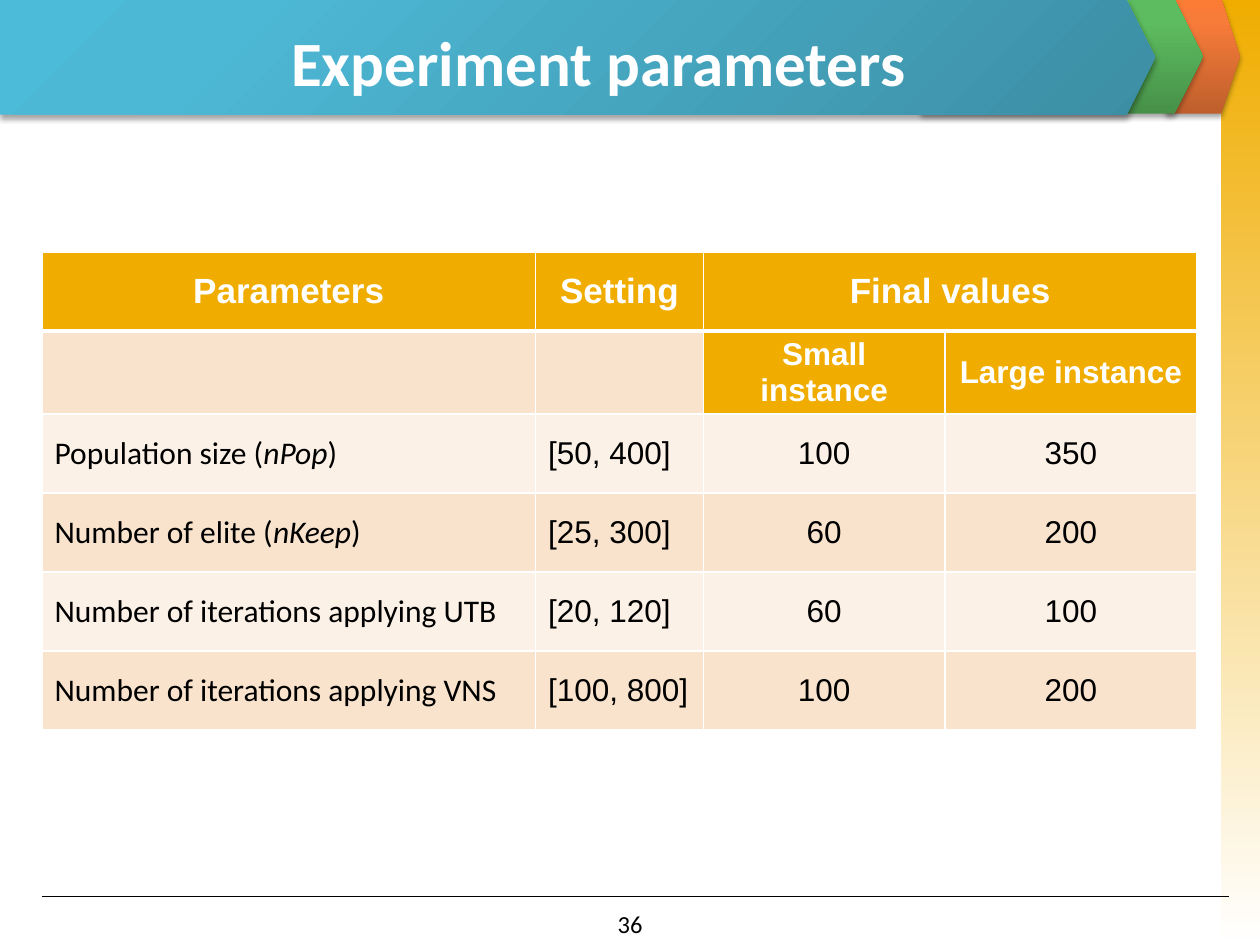
from pptx import Presentation
from pptx.dml.color import RGBColor
from pptx.enum.shapes import MSO_CONNECTOR, MSO_SHAPE
from pptx.enum.text import MSO_ANCHOR, PP_ALIGN
from pptx.oxml import parse_xml
from pptx.oxml.ns import nsdecls
from pptx.util import Pt

THEME = {
    "white": "FFFFFF", "black": "000000", "gold": "F0AD00",
    "bands": ("F9E3CC", "FCF1E7"),
    "fade": [(0, "F0AD00"), (100, "FFFFFF")],
    "orange": [(0, "BE5F2C"), (80, "F77B39"), (100, "FC7B35")],
    "green": [(0, "479149"), (80, "5DBC5F"), (100, "5BBF5E")],
    "blue": [(0, "3C8EA4"), (80, "4DB8D5"), (100, "4BBBD9")],
    "sans": "Calibri", "grid": "Arial",
    "title": 36, "head": 20, "cell": 18, "foot": 14,
}
TITLE = "Experiment parameters"
PAGE = "36"
HEADS = [
    ["Parameters", "Setting", "Final values", ""],
    ["", "", "Small instance", "Large instance"],
]
ROWS = [
    [("Population size (", "nPop", ")"), "[50, 400]", "100", "350"],
    [("Number of elite (", "nKeep", ")"), "[25, 300]", "60", "200"],
    ["Number of iterations applying UTB", "[20, 120]", "60", "100"],
    ["Number of iterations applying VNS", "[100, 800]", "100", "200"],
]
COLS = [282, 96, 138, 144]
HIGH = 45.1
PLATES = [
    ("orange", (666, -0.5, 42.5, 65.5)),
    ("green", (526.5, -0.5, 161, 65.5)),
    ("blue", (0, 0, 660, 65.5)),
]


def put(frame, text, font=THEME["sans"], size=THEME["cell"],
        color=THEME["black"], bold=False, align=PP_ALIGN.CENTER):
    frame.word_wrap = True
    para = frame.paragraphs[0]
    para.alignment = align
    parts = (text,) if isinstance(text, str) else text
    for i, part in enumerate(parts):
        run = para.add_run()
        run.text = part
        run.font.name = font
        run.font.size = Pt(size)
        run.font.bold = bold
        run.font.italic = i % 2 == 1
        run.font.color.rgb = RGBColor.from_string(color)


def block(slide, kind, box, stops, angle=None, shade=True):
    shape = slide.shapes.add_shape(kind, *map(Pt, box))
    shape.line.fill.background()
    shape.shadow.inherit = False
    marks = "".join(
        f'<a:gs pos="{pos * 1000}"><a:srgbClr val="{tone}"/></a:gs>'
        for pos, tone in stops)
    if angle is None:
        way = ('<a:path path="circle">'
               '<a:fillToRect l="100000" t="100000"/></a:path>')
    else:
        way = f'<a:lin ang="{angle * 60000}" scaled="0"/>'
    props = shape._element.spPr
    props.insert(2, parse_xml(
        f'<a:gradFill {nsdecls("a")} rotWithShape="1">'
        f'<a:gsLst>{marks}</a:gsLst>{way}</a:gradFill>'))
    if shade:
        props[-1].append(parse_xml(
            f'<a:outerShdw {nsdecls("a")} blurRad="{Pt(3.1)}" '
            f'dist="{Pt(1.8)}" dir="5400000" rotWithShape="0">'
            f'<a:srgbClr val="{THEME["black"]}"><a:alpha val="35000"/>'
            '</a:srgbClr></a:outerShdw>'))
    return shape


def edge(cell, row):
    wide = {"lnT": 3 if row == 1 else 1, "lnB": 3 if row == 0 else 1}
    for side in ("lnL", "lnR", "lnT", "lnB"):
        cell._tc.get_or_add_tcPr().append(parse_xml(
            f'<a:{side} {nsdecls("a")} w="{Pt(wide.get(side, 1))}">'
            f'<a:solidFill><a:srgbClr val="{THEME["white"]}"/></a:solidFill>'
            f'</a:{side}>'))


def fill(cell, text, row, col):
    head = row < len(HEADS)
    edge(cell, row)
    cell.vertical_anchor = MSO_ANCHOR.MIDDLE
    cell.fill.solid()
    gold = row == 0 or (head and text)
    tone = THEME["gold"] if gold else THEME["bands"][(row + 1) % 2]
    cell.fill.fore_color.rgb = RGBColor.from_string(tone)
    if text:
        put(cell.text_frame, text,
            font=THEME["sans"] if col == 0 and not head else THEME["grid"],
            size=THEME["head"] if row == 0 else THEME["cell"],
            color=THEME["white"] if head else THEME["black"], bold=head,
            align=PP_ALIGN.CENTER if head or col > 1 else PP_ALIGN.LEFT)


def frame(slide):
    block(slide, MSO_SHAPE.RECTANGLE, (697.5, 0, 22.5, 540),
          THEME["fade"], 90, False)
    for name, box in PLATES:
        plate = block(slide, MSO_SHAPE.PENTAGON, box, THEME[name],
                      None if name == "blue" else 270)
        plate.adjustments[0] = 0.25
    rule = slide.shapes.add_connector(
        MSO_CONNECTOR.STRAIGHT, Pt(24), Pt(512.5), Pt(702), Pt(512.5))
    rule.line.width = Pt(0.75)
    rule.line.color.rgb = RGBColor.from_string(THEME["black"])
    rule._element.spPr.append(parse_xml(f'<a:effectLst {nsdecls("a")}/>'))


def grid(slide):
    data = HEADS + ROWS
    table = slide.shapes.add_table(
        len(data), len(COLS), Pt(24), Pt(144),
        Pt(sum(COLS)), Pt(HIGH * len(data))).table
    for col, wide in enumerate(COLS):
        table.columns[col].width = Pt(wide)
    for row, texts in enumerate(data):
        table.rows[row].height = Pt(HIGH)
        for col, text in enumerate(texts):
            fill(table.cell(row, col), text, row, col)
    table.cell(0, 2).merge(table.cell(0, 3))


def main():
    deck = Presentation()
    deck.slide_width, deck.slide_height = Pt(720), Pt(540)
    slide = deck.slides.add_slide(deck.slide_layouts[5])
    frame(slide)
    title = slide.shapes.title
    slide.shapes._spTree.append(title._element)
    title.left, title.top, title.width, title.height = map(
        Pt, (18, 10, 648, 50))
    title.text_frame.vertical_anchor = MSO_ANCHOR.MIDDLE
    put(title.text_frame, TITLE, size=THEME["title"],
        color=THEME["white"], bold=True)
    grid(slide)
    foot = slide.shapes.add_textbox(Pt(276), Pt(516), Pt(168), Pt(18))
    put(foot.text_frame, PAGE, size=THEME["foot"])
    deck.save("out.pptx")


if __name__ == "__main__":
    main()
